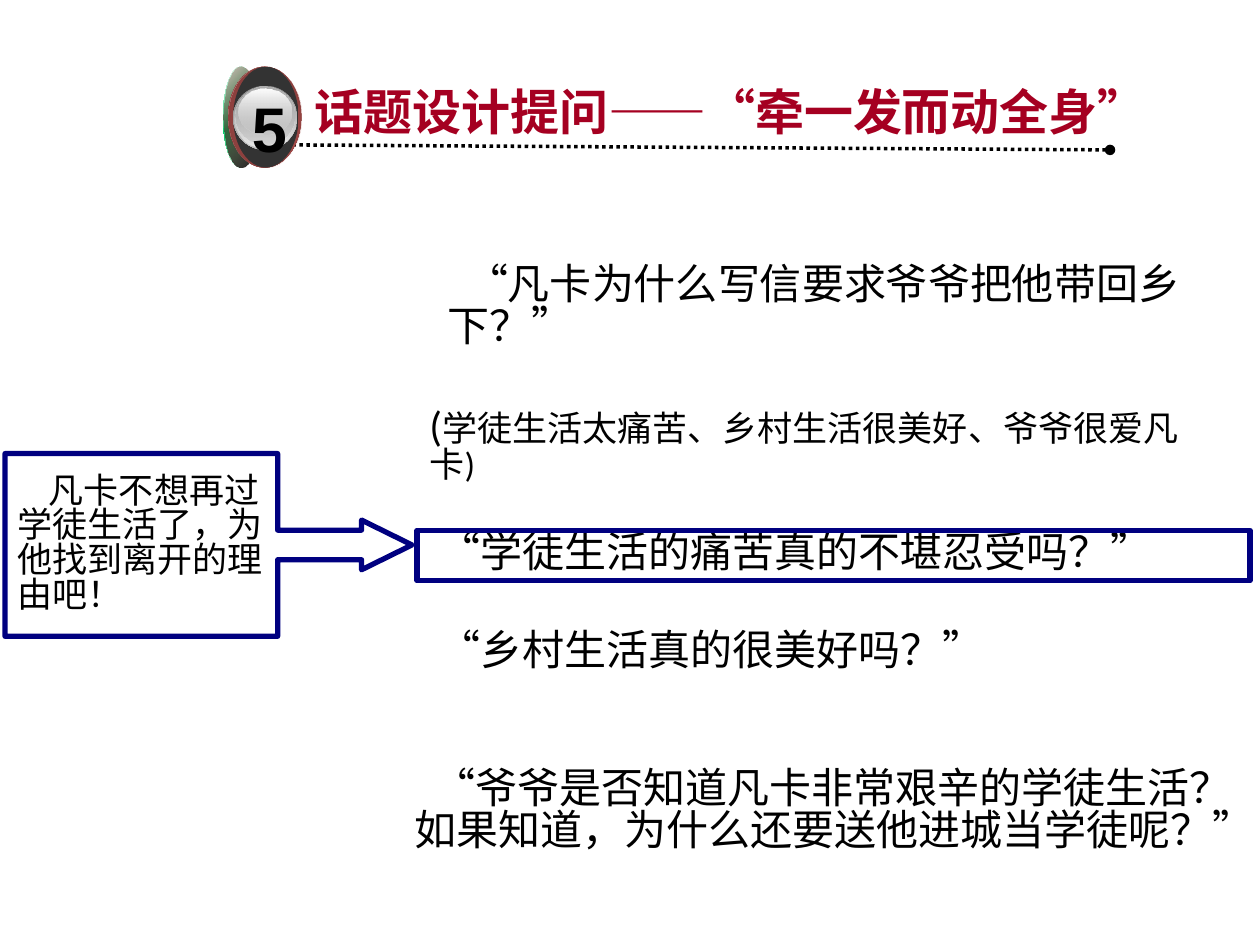
from lxml import etree
from pptx import Presentation
from pptx.dml.color import RGBColor
from pptx.enum.shapes import MSO_CONNECTOR, MSO_SHAPE
from pptx.enum.text import MSO_ANCHOR
from pptx.oxml.ns import qn
from pptx.util import Inches, Pt

BLACK = RGBColor(0x00, 0x00, 0x00)
NAVY = RGBColor(0x00, 0x00, 0x80)
CRIMSON = RGBColor(0xA5, 0x00, 0x21)
TOP, MIDDLE = MSO_ANCHOR.TOP, MSO_ANCHOR.MIDDLE
OVAL, PROCESS = MSO_SHAPE.OVAL, MSO_SHAPE.FLOWCHART_PROCESS
CALLOUT = MSO_SHAPE.RIGHT_ARROW_CALLOUT
CJK = "Noto Sans CJK SC"
CJK_SPACING = 0.83

# Content: box, paragraphs of (text, size) runs, first-line indent, wrap
QUESTIONS = [
    ((3.45, 1.99, 6.39, 0.91),
     [[("“凡卡为什么写信要求爷爷把他带回乡下？”", 24)]], 0.15, True),
    ((3.31, 3.13, 6.38, 0.83),
     [[("(", 24), ("学徒生活太痛苦、乡村生活很美好、爷爷很爱凡卡)", 20)]], 0, True),
    ((3.38, 4.15, 6, 0.51),
     [[("“学徒生活的痛苦真的不堪忍受吗？”", 24)]], 0, False),
    ((3.38, 4.93, 4.65, 0.51),
     [[("“乡村生活真的很美好吗？”", 24)]], 0, False),
    ((3.19, 5.99, 7.05, 0.91),
     [[("“爷爷是否知道凡卡非常艰辛的学徒生活？", 24)],
      [("如果知道，为什么还要送他进城当学徒呢？”", 24)]], 0.15, True),
]
CALLOUT_TEXT = "凡卡不想再过学徒生活了，为他找到离开的理由吧！"
TITLE = "话题设计提问——“牵一发而动全身”"

# Badge layers, back to front: box, stops of (position, colour, opacity), angle
SIDE, RIM = (1.77, 0.53, 0.28, 0.8), (1.81, 0.53, 0.58, 0.8)
BADGE = [
    (SIDE, [(0, "FFFFFF", 100), (50, "00CC66", 100), (100, "FFFFFF", 100)], 45),
    (SIDE, [(0, "A24A48", 32), (100, "000000", 90)], 45),
    (RIM, [(0, "7C3937", 100), (50, "A24A48", 100), (100, "7C3937", 100)], 315),
    (RIM, [(0, "853D3B", 100), (100, "A24A48", 0)], 45),
    ((1.85, 0.53, 0.52, 0.8), [(0, "333333", 100), (100, "333333", 100)], 0),
    ((1.85, 0.68, 0.51, 0.51), [(0, "898989", 100), (100, "C0C0C0", 100)], 90),
    ((1.86, 0.69, 0.49, 0.49), [(0, "C0C0C0", 0), (100, "EBEBEB", 100)], 90),
    ((1.87, 0.69, 0.47, 0.46), [(0, "AEAEAE", 100), (100, "C0C0C0", 48)], 90),
    ((1.89, 0.7, 0.42, 0.37), [(0, "FFFFFF", 100), (100, "C0C0C0", 38)], 90),
]

prs = Presentation()
prs.slide_width, prs.slide_height = Inches(10), Inches(7.5)
s = prs.slides.add_slide(prs.slide_layouts[6])


def write(sp, paragraphs, indent=0, wrap=True, anchor=MIDDLE, font="Calibri",
          color=BLACK, bold=False, spacing=CJK_SPACING):
    tf = sp.text_frame
    tf.word_wrap = wrap
    tf.vertical_anchor = anchor
    for i, runs in enumerate(paragraphs):
        p = tf.add_paragraph() if i else tf.paragraphs[0]
        p.line_spacing = spacing
        pPr = p._p.get_or_add_pPr()
        pPr.set("algn", "l")
        if i == 0 and indent:
            pPr.set("indent", str(Inches(indent)))
        for text, size in runs:
            r = p.add_run()
            r.text = text
            r.font.size, r.font.bold = Pt(size), bold
            r.font.name, r.font.color.rgb = font, color
            etree.SubElement(r._r.get_or_add_rPr(), qn("a:ea"), typeface=CJK)


def textbox(box, paragraphs, **fmt):
    write(s.shapes.add_textbox(*map(Inches, box)), paragraphs, **fmt)


def outline(kind, box):
    sp = s.shapes.add_shape(kind, *map(Inches, box))
    sp.shadow.inherit = False
    sp.fill.background()
    sp.line.color.rgb, sp.line.width = NAVY, Pt(3)
    return sp


def gradient_oval(box, stops, angle):
    sp = s.shapes.add_shape(OVAL, *map(Inches, box))
    sp.shadow.inherit = False
    sp.line.fill.background()
    sp.fill.gradient()
    grad = sp._element.spPr.find(qn("a:gradFill"))
    for child in list(grad):
        grad.remove(child)
    stop_list = etree.SubElement(grad, qn("a:gsLst"))
    for pos, rgb, opacity in stops:
        gs = etree.SubElement(stop_list, qn("a:gs"), pos=str(pos * 1000))
        clr = etree.SubElement(gs, qn("a:srgbClr"), val=rgb)
        if opacity < 100:
            etree.SubElement(clr, qn("a:alpha"), val=str(opacity * 1000))
    etree.SubElement(grad, qn("a:lin"), ang=str(angle * 60000), scaled="1")


# Callout on the left
callout = outline(CALLOUT, (0.04, 3.6, 3.23, 1.45))
for i, value in enumerate((0.162, 0.136, 0.276, 0.67)):
    callout.adjustments[i] = value
write(callout, [[(CALLOUT_TEXT, 20)]], indent=0.25)

# Questions, with a frame round the one the callout points at
for box, paragraphs, indent, wrap in QUESTIONS:
    textbox(box, paragraphs, indent=indent, wrap=wrap)
outline(PROCESS, (3.31, 4.21, 6.61, 0.4))

# Dotted title rule with a round end
rule = s.shapes.add_connector(MSO_CONNECTOR.STRAIGHT, Inches(2.32), Inches(1.15),
                              Inches(8.81), Inches(1.19))
rule.line.color.rgb, rule.line.width = BLACK, Pt(2)
ln = rule.line._get_or_add_ln()
etree.SubElement(ln, qn("a:prstDash"), val="sysDot")
etree.SubElement(ln, qn("a:tailEnd"), type="oval")
etree.SubElement(rule._element.spPr, qn("a:effectLst"))

# Title and numbered badge
textbox((2.4, 0.68, 6.88, 0.57), [[(TITLE, 28)]], wrap=False, anchor=TOP,
        font=CJK, color=CRIMSON, bold=True)
for box, stops, angle in BADGE:
    gradient_oval(box, stops, angle)
textbox((1.9, 0.66, 0.48, 0.71), [[("5", 36)]], wrap=False, anchor=TOP,
        font="Arial", bold=True, spacing=1.0)

prs.save("out.pptx")
